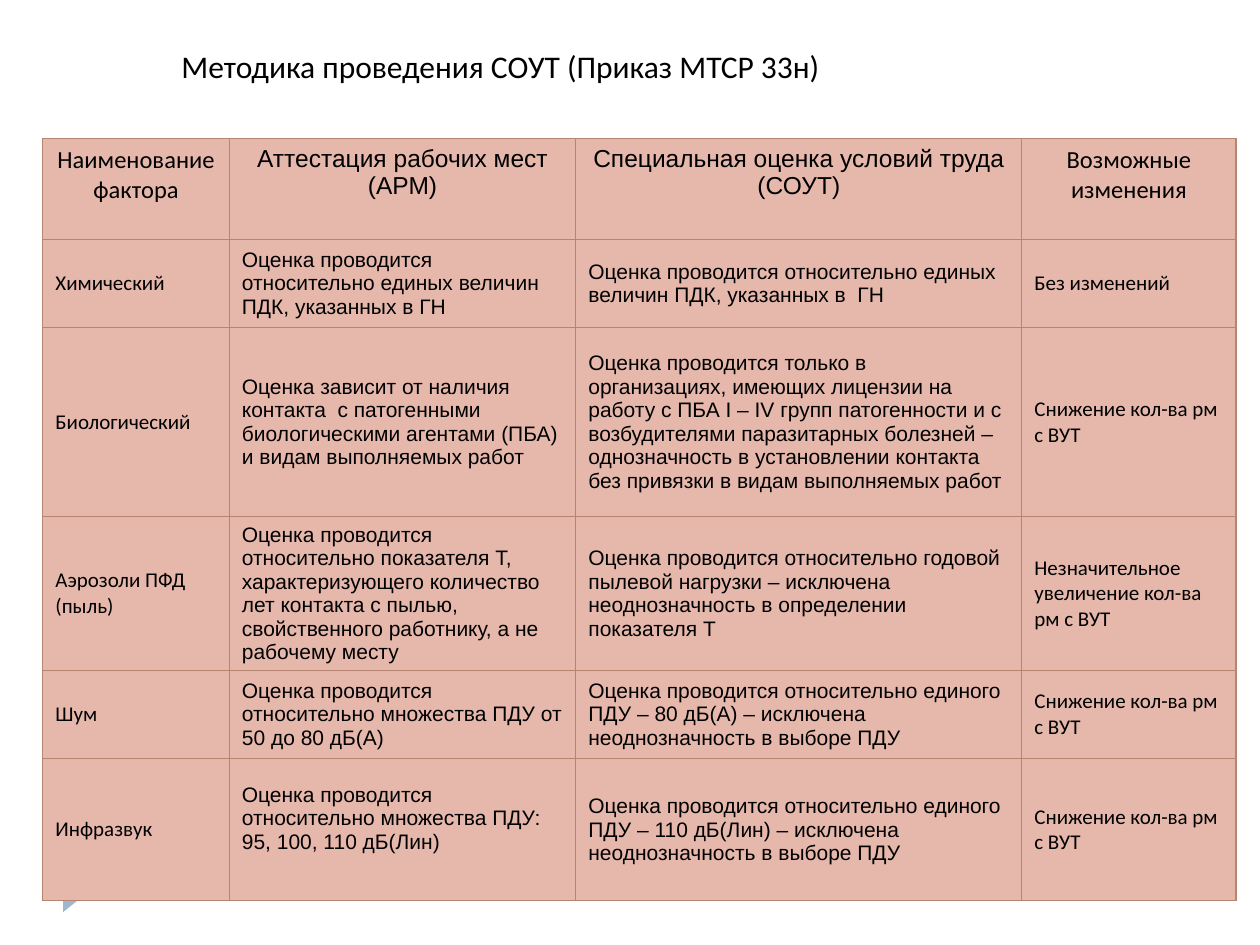
from lxml.etree import SubElement
from pptx import Presentation
from pptx.dml.color import RGBColor
from pptx.enum.shapes import MSO_SHAPE
from pptx.enum.text import MSO_ANCHOR as ANCHOR, PP_ALIGN as ALIGN
from pptx.oxml.ns import qn
from pptx.util import Inches, Pt

COLORS = {"text": "000000", "cell": "E6B8AC", "border": "B88472", "marker": "9FB8CD"}
COL_WIDTHS = [1.48, 2.75, 3.54, 1.7]
COL_FONTS = ["Calibri", "Arial", "Arial", "Calibri"]
ROW_HEIGHTS = [0.8, 0.7, 1.5, 1.1, 0.7, 1.13]
FEWER = "Снижение кол-ва рм с ВУТ"
ROWS = [
    ["Наименование фактора", "Аттестация рабочих мест (АРМ)",
     "Специальная оценка условий труда (СОУТ)", "Возможные изменения"],
    ["Химический",
     "Оценка проводится относительно единых величин ПДК, указанных в ГН",
     "Оценка проводится относительно единых величин ПДК, указанных в  ГН",
     "Без изменений"],
    ["Биологический",
     "Оценка зависит от наличия контакта  с патогенными биологическими агентами (ПБА) "
     "и видам выполняемых работ",
     "Оценка проводится только в организациях, имеющих лицензии на работу с ПБА I – IV "
     "групп патогенности и с возбудителями паразитарных болезней – однозначность в "
     "установлении контакта без привязки в видам выполняемых работ",
     FEWER],
    ["Аэрозоли ПФД (пыль)",
     "Оценка проводится относительно показателя Т, характеризующего количество лет "
     "контакта с пылью, свойственного работнику, а не рабочему месту",
     "Оценка проводится относительно годовой пылевой нагрузки – исключена "
     "неоднозначность в определении показателя Т",
     "Незначительное увеличение кол-ва рм с ВУТ"],
    ["Шум",
     "Оценка проводится относительно множества ПДУ от 50 до 80 дБ(А)",
     "Оценка проводится относительно единого ПДУ – 80 дБ(А) – исключена "
     "неоднозначность в выборе ПДУ",
     FEWER],
    ["Инфразвук",
     "Оценка проводится относительно множества ПДУ: 95, 100, 110 дБ(Лин)",
     "Оценка проводится относительно единого ПДУ – 110 дБ(Лин) – исключена "
     "неоднозначность в выборе ПДУ",
     FEWER],
]


def rgb(name):
    """Return the named colour."""
    return RGBColor.from_string(COLORS[name])


def write(tf, text, size, font, align=ALIGN.LEFT):
    """Write one formatted paragraph into a text frame."""
    p = tf.paragraphs[0]
    p.alignment = align
    r = p.add_run()
    r.text = text
    for key, value in {"size": Pt(size), "name": font, "bold": False}.items():
        setattr(r.font, key, value)
    r.font.color.rgb = rgb("text")


def set_borders(cell):
    """Draw a thin line on all four sides of a cell."""
    tc_pr = cell._tc.get_or_add_tcPr()
    for i, side in enumerate(("lnL", "lnR", "lnT", "lnB")):
        ln = tc_pr.makeelement(qn(f"a:{side}"), {"w": str(Pt(0.75))})
        fill = SubElement(ln, qn("a:solidFill"))
        SubElement(fill, qn("a:srgbClr"), val=COLORS["border"])
        tc_pr.insert(i, ln)


def add_title(slide, box, text):
    """Place and format the title placeholder."""
    sp = slide.shapes.title
    for key, value in zip(("left", "top", "width", "height"), box):
        setattr(sp, key, Inches(value))
    tf = sp.text_frame
    for key, value in {"word_wrap": True, "vertical_anchor": ANCHOR.MIDDLE}.items():
        setattr(tf, key, value)
    write(tf, text, 18, "Calibri")


def add_marker(slide, box):
    """Add the small right-pointing footer triangle."""
    sp = slide.shapes.add_shape(MSO_SHAPE.ISOSCELES_TRIANGLE, *map(Inches, box))
    sp.rotation = 90
    sp.shadow.inherit = False
    sp.fill.solid()
    sp.fill.fore_color.rgb = rgb("marker")
    sp.line.fill.background()


def add_factor_table(slide, box):
    """Add the comparison table of workplace factors."""
    frame = slide.shapes.add_table(len(ROWS), len(COL_WIDTHS), *map(Inches, box))
    table = frame.table
    table.horz_banding = False
    for col, width in zip(table.columns, COL_WIDTHS):
        col.width = Inches(width)
    for row, height in zip(table.rows, ROW_HEIGHTS):
        row.height = Inches(height)
    for i, texts in enumerate(ROWS):
        size, align, anchor = ((12, ALIGN.LEFT, ANCHOR.MIDDLE) if i
                               else (14, ALIGN.CENTER, ANCHOR.TOP))
        for j, (text, font) in enumerate(zip(texts, COL_FONTS)):
            cell = table.cell(i, j)
            cell.vertical_anchor = anchor
            cell.fill.solid()
            cell.fill.fore_color.rgb = rgb("cell")
            set_borders(cell)
            write(cell.text_frame, text, size, font, align)
    table.cell(len(ROWS) - 1, 1).margin_bottom = Inches(0.23)


def main():
    """Build and save the slide."""
    prs = Presentation()
    prs.slide_width, prs.slide_height = Inches(10), Inches(7.5)
    slide = prs.slides.add_slide(prs.slide_layouts[5])
    add_marker(slide, (0.46, 7.07, 0.21, 0.13))
    add_title(slide, (1.34, 0.21, 7.75, 0.63), "Методика проведения СОУТ (Приказ МТСР 33н)")
    add_factor_table(slide, (0.34, 1.1, sum(COL_WIDTHS), sum(ROW_HEIGHTS)))
    prs.save("out.pptx")


if __name__ == "__main__":
    main()
